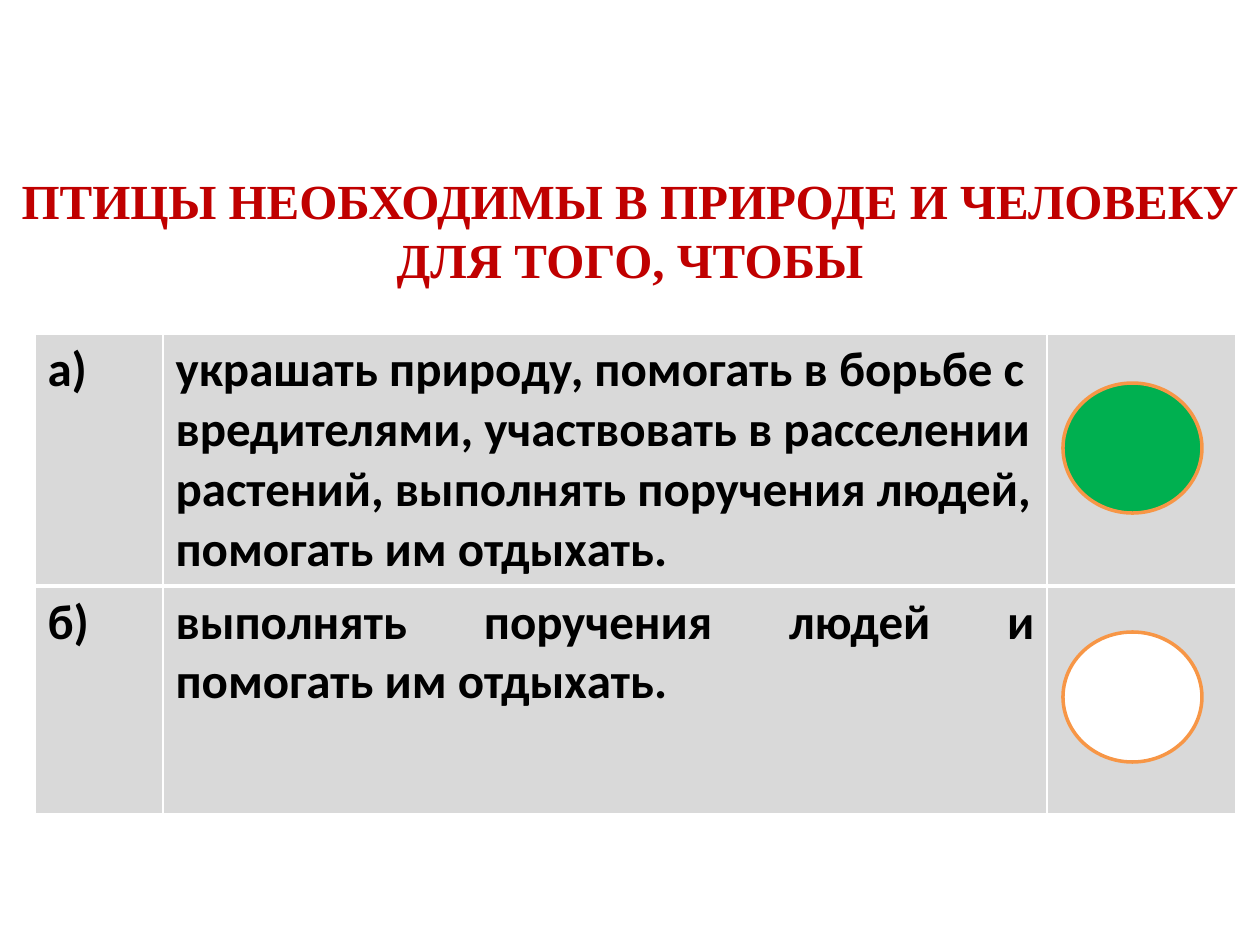
"""Build a quiz slide: a question, two answers and an indicator for each."""
from dataclasses import dataclass

from lxml.etree import SubElement
from pptx import Presentation
from pptx.dml.color import RGBColor
from pptx.enum.shapes import MSO_SHAPE
from pptx.enum.text import MSO_ANCHOR, MSO_AUTO_SIZE, PP_ALIGN
from pptx.oxml.ns import qn
from pptx.util import Emu, Pt


@dataclass(frozen=True)
class Theme:
    question: str = "C00000"
    answer: str = "000000"
    cell: str = "D9D9D9"
    border: str = "FFFFFF"
    outline: str = "F79646"
    correct: str = "00B050"
    wrong: str = "FFFFFF"
    size: int = 28
    question_font: str = "Times New Roman"
    answer_font: str = "Calibri"
    thin: int = 1
    thick: int = 3
    outline_width: int = 2


THEME = Theme()
QUESTION = "ПТИЦЫ НЕОБХОДИМЫ В ПРИРОДЕ И ЧЕЛОВЕКУ ДЛЯ ТОГО, ЧТОБЫ"
ANSWERS = [
    ("а)", "украшать природу, помогать в борьбе с вредителями, участвовать "
           "в расселении растений, выполнять поручения людей, помогать им отдыхать.",
     PP_ALIGN.LEFT),
    ("б)", "выполнять поручения людей и помогать им отдыхать.", PP_ALIGN.JUSTIFY),
]
COLUMNS = (128, 884, 189)
ROW_HEIGHT = 228


def px(length):
    return Emu(round(length * 914400 / 126))


def box(*lengths):
    return [px(length) for length in lengths]


def style(paragraph, font_name, color, align):
    paragraph.alignment = align
    paragraph.font.name = font_name
    paragraph.font.size = Pt(THEME.size)
    paragraph.font.bold = True
    paragraph.font.color.rgb = RGBColor.from_string(color)


def add_question(slide):
    title = slide.shapes.title
    title.left, title.top, title.width, title.height = box(0, 155, 1260, 149)
    frame = title.text_frame
    frame.text = QUESTION
    frame.word_wrap = True
    frame.auto_size = MSO_AUTO_SIZE.NONE
    frame.vertical_anchor = MSO_ANCHOR.MIDDLE
    style(frame.paragraphs[0], THEME.question_font, THEME.question, PP_ALIGN.CENTER)


def set_border(cell, side, width):
    line = SubElement(cell._tc.get_or_add_tcPr(), qn(f"a:ln{side}"), w=str(Pt(width)))
    SubElement(SubElement(line, qn("a:solidFill")), qn("a:srgbClr"), val=THEME.border)


def format_cell(cell, inner_side):
    for side in "LRTB":
        set_border(cell, side, THEME.thick if side == inner_side else THEME.thin)
    cell.fill.solid()
    cell.fill.fore_color.rgb = RGBColor.from_string(THEME.cell)


def fill_cell(cell, text, align):
    cell.text = text
    style(cell.text_frame.paragraphs[0], THEME.answer_font, THEME.answer, align)


def add_answers(slide):
    table = slide.shapes.add_table(
        len(ANSWERS), len(COLUMNS), *box(35, 334, sum(COLUMNS), ROW_HEIGHT * len(ANSWERS))
    ).table
    table.first_row = table.horz_banding = False
    for column, width in zip(table.columns, COLUMNS):
        column.width = px(width)
    for row, inner_side, (letter, answer, align) in zip(table.rows, "BT", ANSWERS):
        row.height = px(ROW_HEIGHT)
        for cell in row.cells:
            format_cell(cell, inner_side)
        fill_cell(row.cells[0], letter, PP_ALIGN.LEFT)
        fill_cell(row.cells[1], answer, align)


def add_indicator(slide, top, color):
    indicator = slide.shapes.add_shape(MSO_SHAPE.OVAL, *box(1063, top, 139, 130))
    indicator.shadow.inherit = False
    indicator.fill.solid()
    indicator.fill.fore_color.rgb = RGBColor.from_string(color)
    indicator.line.color.rgb = RGBColor.from_string(THEME.outline)
    indicator.line.width = Pt(THEME.outline_width)


def main():
    presentation = Presentation()
    presentation.slide_width, presentation.slide_height = box(1260, 945)
    slide = presentation.slides.add_slide(presentation.slide_layouts[5])
    add_question(slide)
    add_answers(slide)
    add_indicator(slide, 632, THEME.wrong)
    add_indicator(slide, 383, THEME.correct)
    presentation.save("out.pptx")


if __name__ == "__main__":
    main()
